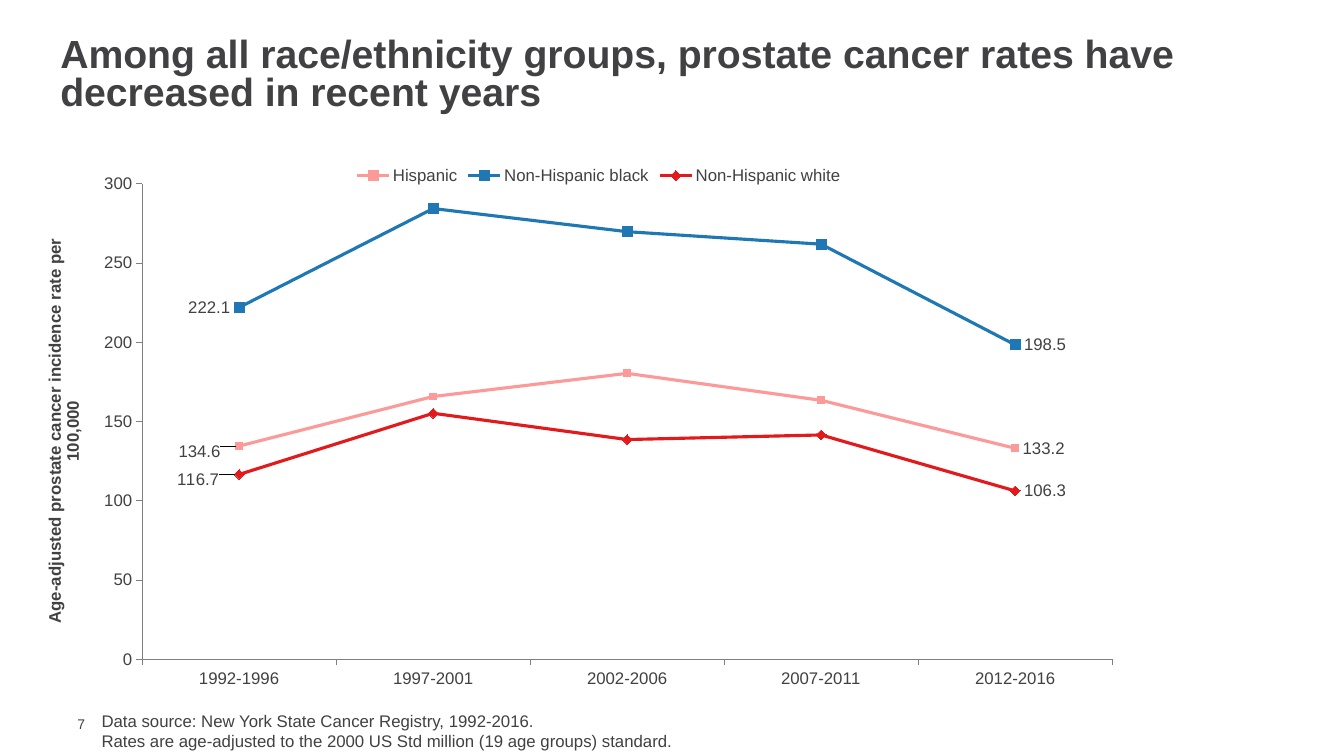
from dataclasses import dataclass

from lxml import etree
from pptx import Presentation
from pptx import util as u
from pptx.chart import data as cd
from pptx.dml.color import RGBColor
from pptx.enum import chart as ch
from pptx.enum import text
from pptx.oxml.ns import qn


@dataclass(frozen=True)
class Theme:
    font: str = "Arial"
    ink: str = "414042"
    axis: str = "808080"
    hispanic: str = "FB9A99"
    black: str = "1F78B4"
    white: str = "E31A1C"
    title_size: int = 28
    body_size: int = 12
    number_size: int = 10
    line_width: float = 2.25
    axis_width: float = 0.75


T = Theme()

PERIODS = ["1992-1996", "1997-2001", "2002-2006", "2007-2011", "2012-2016"]
SQUARE, DIAMOND = ch.XL_MARKER_STYLE.SQUARE, ch.XL_MARKER_STYLE.DIAMOND
# name, rates, colour, marker, marker size, shift of the first label
GROUPS = [
    ("Hispanic", [134.6, 165.9, 180.5, 163.5, 133.2], T.hispanic, SQUARE, 5, (-0.01, 0.01)),
    ("Non-Hispanic black", [222.1, 284.5, 269.9, 262, 198.5], T.black, SQUARE, 7, None),
    ("Non-Hispanic white", [116.7, 155.3, 138.7, 141.6, 106.3], T.white, DIAMOND, 7, (-0.01, 0.01)),
]


def style_font(font, size, bold=False):
    formats = {"name": T.font, "size": u.Pt(size), "bold": bold}
    for name, value in formats.items():
        setattr(font, name, value)
    font.color.rgb = RGBColor.from_string(T.ink)


def style_line(line, colour, width):
    line.color.rgb = RGBColor.from_string(colour)
    line.width = u.Pt(width)


def set_layout(parent, index, **values):
    """Insert a manual layout as the given child of a chart element."""
    for old in parent.findall(qn("c:layout")):
        parent.remove(old)
    layout = etree.Element(qn("c:layout"))
    manual = etree.SubElement(layout, qn("c:manualLayout"))
    for name, value in values.items():
        etree.SubElement(manual, qn("c:" + name)).set("val", str(value))
    parent.insert(index, layout)


def add_text(s, box, lines, size, bold=False, spacing=None, frame_formats=None):
    tf = s.shapes.add_textbox(*map(u.Cm, box)).text_frame
    for name, value in {"word_wrap": True, **(frame_formats or {})}.items():
        setattr(tf, name, value)
    for i, line in enumerate(lines):
        p = tf.paragraphs[0] if i == 0 else tf.add_paragraph()
        if spacing:
            p.line_spacing = spacing
        r = p.add_run()
        r.text = line
        style_font(r.font, size, bold)


def add_title(s, box):
    add_text(s, box, ["Among all race/ethnicity groups, prostate cancer rates have "
                      "decreased in recent years"],
             T.title_size, True, 0.8, {"vertical_anchor": text.MSO_ANCHOR.MIDDLE})


def style_axes(chart):
    for axis in (chart.category_axis, chart.value_axis):
        formats = {"has_major_gridlines": False,
                   "major_tick_mark": ch.XL_TICK_MARK.OUTSIDE,
                   "minor_tick_mark": ch.XL_TICK_MARK.NONE}
        for name, value in formats.items():
            setattr(axis, name, value)
        style_font(axis.tick_labels.font, T.body_size)
        style_line(axis.format.line, T.axis, T.axis_width)

    rates = chart.value_axis
    for name, value in {"minimum_scale": 0, "maximum_scale": 300, "major_unit": 50}.items():
        setattr(rates, name, value)
    rates.tick_labels.number_format = "0"
    rates.tick_labels.number_format_is_linked = False
    r = rates.axis_title.text_frame.paragraphs[0].add_run()
    r.text = "Age-adjusted prostate cancer incidence rate per 100,000"
    style_font(r.font, T.body_size, True)


def style_series(series, colour, marker, size, shift):
    series.smooth = False
    style_line(series.format.line, colour, T.line_width)
    series.marker.style = marker
    series.marker.size = size
    series.marker.format.fill.solid()
    series.marker.format.fill.fore_color.rgb = RGBColor.from_string(colour)
    style_line(series.marker.format.line, colour, T.axis_width)

    # Values at the first and last period only
    series.data_labels.show_value = False
    ends = {0: ch.XL_LABEL_POSITION.LEFT, len(PERIODS) - 1: ch.XL_LABEL_POSITION.RIGHT}
    for i, position in ends.items():
        label = series.points[i].data_label
        style_font(label.font, T.body_size)
        label.position = position
    if shift:
        first = series.data_labels._element.find(qn("c:dLbl"))
        set_layout(first, 1, x=shift[0], y=shift[1])


def add_rates_chart(s, box):
    data = cd.CategoryChartData()
    data.categories = PERIODS
    for name, rates, *_ in GROUPS:
        data.add_series(name, rates)
    chart = s.shapes.add_chart(ch.XL_CHART_TYPE.LINE_MARKERS, *map(u.Cm, box), data).chart
    chart.has_title = False
    style_font(chart.font, T.number_size)
    style_axes(chart)
    chart.plots[0].vary_by_categories = False
    for series, (_, _, *look) in zip(chart.plots[0].series, GROUPS):
        style_series(series, *look)

    # Legend above the plot
    chart.has_legend = True
    chart.legend.position = ch.XL_LEGEND_POSITION.TOP
    chart.legend.include_in_layout = False
    style_font(chart.legend.font, T.body_size)
    set_layout(chart.legend._element, 1, xMode="edge", yMode="edge", x=0.28, y=0.01)

    # Inner plot area
    plot_area = chart._chartSpace.chart.plotArea
    set_layout(plot_area, 0, layoutTarget="inner", xMode="edge", yMode="edge",
               x=0.091, y=0.049, w=0.875, h=0.867)


def add_footer(s, number_box, source_box):
    add_text(s, number_box, ["7"], T.number_size, frame_formats={
        "vertical_anchor": text.MSO_ANCHOR.MIDDLE,
        "margin_top": 0, "margin_right": 0, "margin_bottom": 0})
    add_text(s, source_box, [
        "Data source: New York State Cancer Registry, 1992-2016.",
        "Rates are age-adjusted to the 2000 US Std million (19 age groups) standard.",
    ], T.body_size)


def main():
    prs = Presentation()
    prs.slide_width, prs.slide_height = u.Cm(33.87), u.Cm(19.05)
    s = prs.slides.add_slide(prs.slide_layouts[6])
    add_title(s, (1.27, 0.84, 31.32, 2.16))
    add_rates_chart(s, (1.04, 3.96, 27.94, 13.82))
    add_footer(s, (1.7, 18.03, 1.09, 0.43), (2.31, 17.78, 25.2, 1.27))
    prs.save("out.pptx")


if __name__ == "__main__":
    main()
